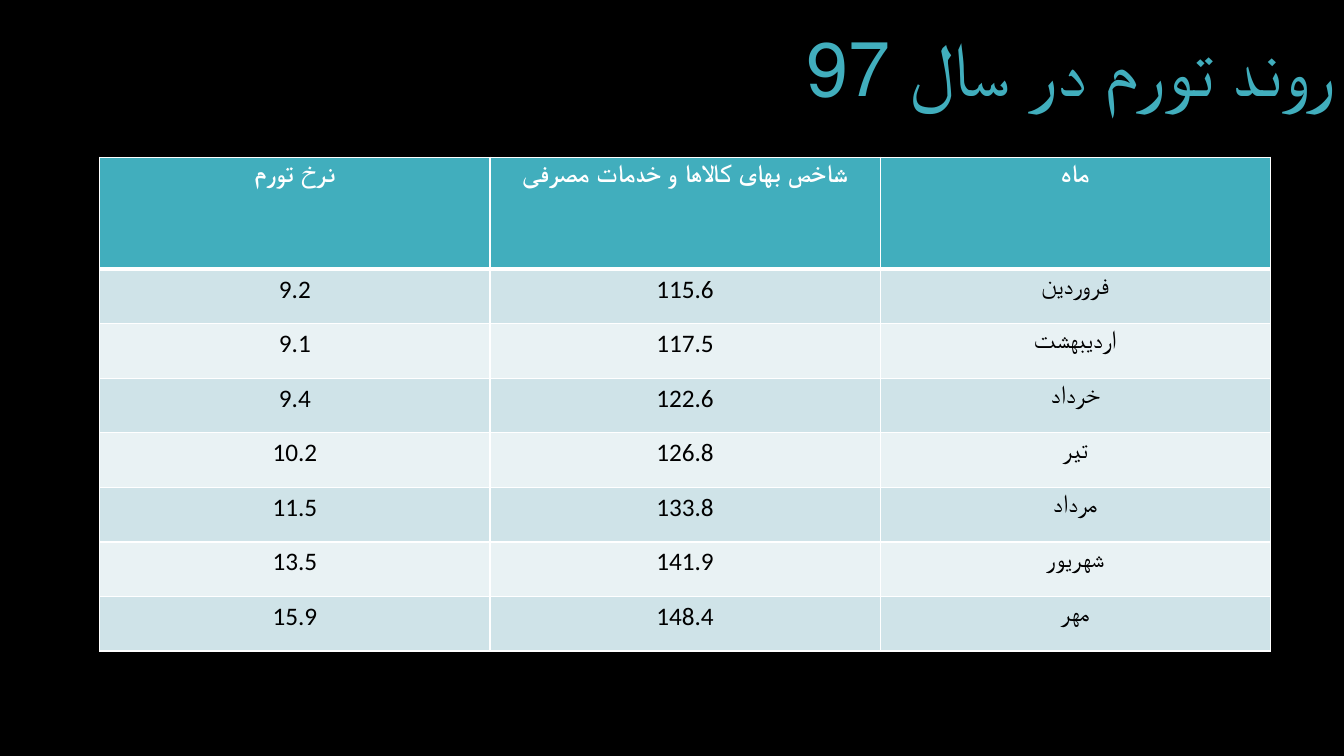
from dataclasses import dataclass

from lxml import etree
from pptx import Presentation
from pptx import util as u
from pptx.dml.color import RGBColor
from pptx.enum import text
from pptx.oxml import ns


@dataclass(frozen=True)
class Theme:
    font: str = "Calibri"
    title_size: int = 54
    table_size: int = 18
    backdrop: str = "000000"
    accent: str = "41AEBD"
    bands: tuple = ("CFE3E8", "E9F2F4")
    light: str = "FFFFFF"
    dark: str = "000000"
    thin: int = 1
    thick: int = 3


class InflationPage:
    """Draws styled elements on one page, placed by shares of its size."""

    def __init__(self, deck, theme):
        self.theme = theme
        self.width, self.height = deck.slide_width, deck.slide_height
        self.page = deck.slides.add_slide(deck.slide_layouts[6])
        fill = self.page.background.fill
        fill.solid()
        fill.fore_color.rgb = RGBColor.from_string(theme.backdrop)

    def area(self, left, top, width, height):
        return (int(left * self.width), int(top * self.height),
                int(width * self.width), int(height * self.height))

    def label(self, frame, wording, size, colour, align, bold=False):
        para = frame.paragraphs[0]
        para.text = wording
        para.alignment = align
        if not wording[0].isdigit():
            para._p.get_or_add_pPr().set("rtl", "1")
        para.font.name = self.theme.font
        para.font.size = u.Pt(size)
        para.font.bold = bold
        para.font.color.rgb = RGBColor.from_string(colour)
        return para

    def title(self, wording, area):
        frame = self.page.shapes.add_textbox(*self.area(*area)).text_frame
        frame.word_wrap = True
        frame.vertical_anchor = text.MSO_ANCHOR.MIDDLE
        para = self.label(frame, wording, self.theme.title_size,
                          self.theme.accent, text.PP_ALIGN.RIGHT)
        para.line_spacing = 0.9

    def border(self, cell, side, points):
        properties = cell._tc.get_or_add_tcPr()
        line = etree.SubElement(properties, ns.qn(f"a:ln{side}"), w=str(u.Pt(points)))
        fill = etree.SubElement(line, ns.qn("a:solidFill"))
        etree.SubElement(fill, ns.qn("a:srgbClr"), val=self.theme.light)

    def table(self, rows, area, header_share):
        theme = self.theme
        left, top, width, height = self.area(*area)
        table = self.page.shapes.add_table(
            len(rows), len(rows[0]), left, top, width, height).table
        header_height = int(height * header_share)
        body_height = (height - header_height) // (len(rows) - 1)
        for number, values in enumerate(rows):
            header = number == 0
            table.rows[number].height = header_height if header else body_height
            fill = theme.accent if header else theme.bands[(number - 1) % 2]
            colour = theme.light if header else theme.dark
            edges = {"L": theme.thin, "R": theme.thin,
                     "T": theme.thick if number == 1 else theme.thin,
                     "B": theme.thick if header else theme.thin}
            for column, value in enumerate(values):
                cell = table.cell(number, column)
                for side, points in edges.items():
                    self.border(cell, side, points)
                cell.fill.solid()
                cell.fill.fore_color.rgb = RGBColor.from_string(fill)
                self.label(cell.text_frame, value, theme.table_size, colour,
                           text.PP_ALIGN.CENTER, header)


def main():
    deck = Presentation()
    deck.slide_width, deck.slide_height = u.Inches(13.33), u.Inches(7.5)
    page = InflationPage(deck, Theme())
    page.title("روند تورم در سال 97", (0, 0, 1, 0.19))
    rows = [
        ("نرخ تورم", "شاخص بهای کالاها و خدمات مصرفی", "ماه"),
        ("9.2", "115.6", "فروردین"),
        ("9.1", "117.5", "اردیبهشت"),
        ("9.4", "122.6", "خرداد"),
        ("10.2", "126.8", "تیر"),
        ("11.5", "133.8", "مرداد"),
        ("13.5", "141.9", "شهریور"),
        ("15.9", "148.4", "مهر"),
    ]
    page.table(rows, (0.99 / 13.33, 1.56 / 7.5, 11.61 / 13.33, 4.9 / 7.5), 1.11 / 4.9)
    deck.save("out.pptx")


if __name__ == "__main__":
    main()
